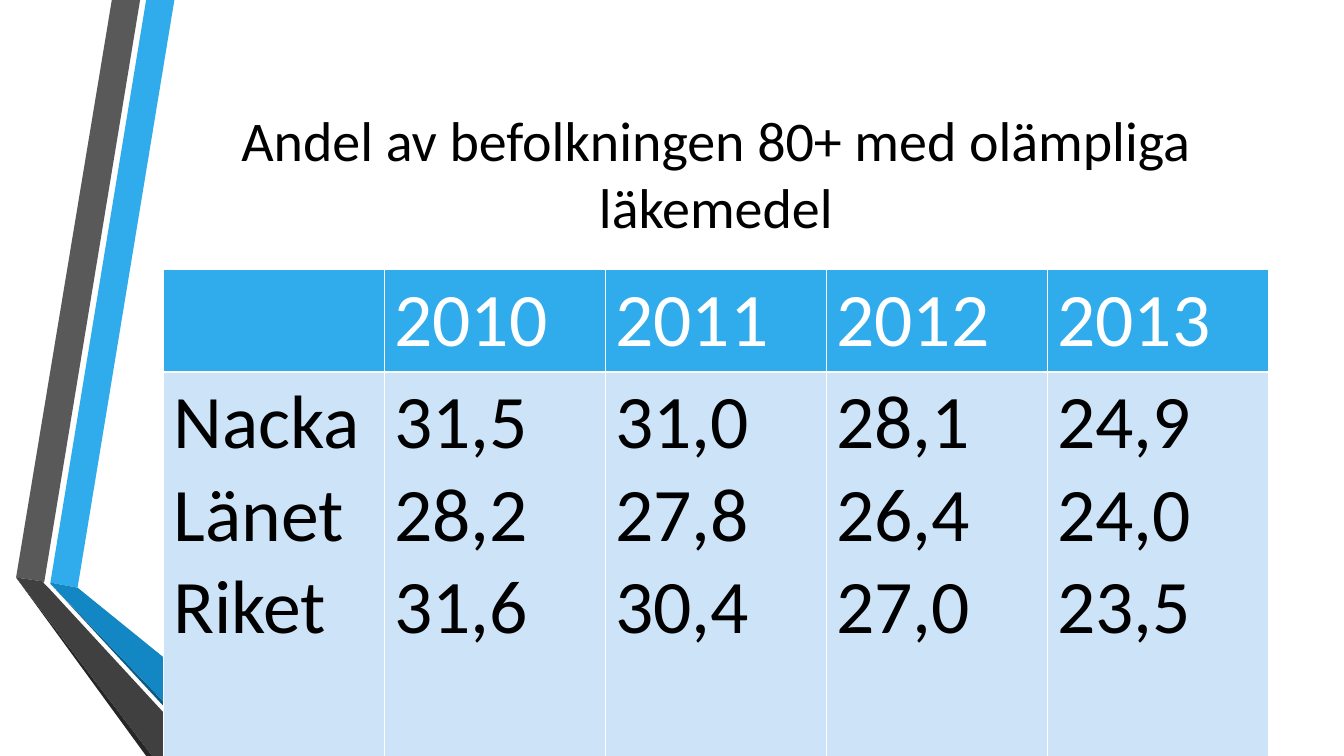
from dataclasses import dataclass

from lxml import etree
from pptx import Presentation
from pptx.dml.color import RGBColor
from pptx.enum.text import MSO_ANCHOR, MSO_AUTO_SIZE, PP_ALIGN
from pptx.oxml.ns import qn
from pptx.util import Pt

CENTER, LEFT = PP_ALIGN.CENTER, PP_ALIGN.LEFT
MIDDLE = MSO_ANCHOR.MIDDLE
NO_AUTOFIT = MSO_AUTO_SIZE.NONE

PX = 9144  # EMU per px, 100 px to the inch
FONT = "Calibri"
BLACK, WHITE = "000000", "FFFFFF"
BLUE, PALE_BLUE = "30ACEC", "CDE3F8"
TITLE_LAYOUT = 5


@dataclass
class Ribbon:
    color: str
    points: list[tuple[int, int]]


@dataclass
class Column:
    year: str
    values: list[str]


RIBBONS = [
    Ribbon(BLUE, [(50, 578), (77, 583), (173, 0), (145, 0)]),
    Ribbon("595959", [(139, 0), (111, 0), (16, 573), (44, 577)]),
    Ribbon("262626", [(16, 573), (145, 750), (151, 750)]),
    Ribbon("0C5A82", [(50, 579), (208, 750), (214, 750)]),
    Ribbon("1287C3", [(50, 578), (50, 579), (214, 750), (283, 750), (77, 583)]),
    Ribbon("404040", [(202, 750), (48, 583), (43, 578), (44, 577), (16, 573), (151, 750)]),
]

COLUMNS = [
    Column("", ["Nacka", "Länet", "Riket"]),
    Column("2010", ["31,5", "28,2", "31,6"]),
    Column("2011", ["31,0", "27,8", "30,4"]),
    Column("2012", ["28,1", "26,4", "27,0"]),
    Column("2013", ["24,9", "24,0", "23,5"]),
]

# Title and table share one left edge and width
LEFT_EDGE, WIDTH = 162, 1096
TITLE_TOP, TITLE_HEIGHT = 75, 192
TABLE_TOP = TITLE_TOP + TITLE_HEIGHT
ROW_HEIGHTS = [102, 458]


def px(n: int) -> int:
    return n * PX


def rgb(color: str) -> RGBColor:
    return RGBColor.from_string(color)


def write(tf, lines: list[str], *, size: int, color: str, align=LEFT) -> None:
    for i, line in enumerate(lines):
        p = tf.paragraphs[0] if i == 0 else tf.add_paragraph()
        p.alignment = align
        r = p.add_run()
        r.text = line
        r.font.name = FONT
        r.font.size = Pt(size)
        r.font.bold = False
        r.font.color.rgb = rgb(color)


def draw_ribbon(shapes, ribbon: Ribbon) -> None:
    start, *rest = ribbon.points
    builder = shapes.build_freeform(*start, scale=PX)
    builder.add_line_segments(rest, close=True)
    sp = builder.convert_to_shape()
    sp.shadow.inherit = False
    sp.fill.solid()
    sp.fill.fore_color.rgb = rgb(ribbon.color)
    sp.line.fill.background()


def set_borders(cell, color: str, width: int) -> None:
    tc_pr = cell._tc.get_or_add_tcPr()
    for side in ("a:lnL", "a:lnR", "a:lnT", "a:lnB"):
        ln = etree.SubElement(tc_pr, qn(side), w=str(Pt(width)))
        fill = etree.SubElement(ln, qn("a:solidFill"))
        etree.SubElement(fill, qn("a:srgbClr"), val=color)


def fill_cell(cell, lines: list[str], fill: str, color: str) -> None:
    set_borders(cell, WHITE, 1)
    cell.fill.solid()
    cell.fill.fore_color.rgb = rgb(fill)
    write(cell.text_frame, lines, size=54, color=color)


def add_title(slide, text: str) -> None:
    sp = slide.shapes.title
    sp.left, sp.top = px(LEFT_EDGE), px(TITLE_TOP)
    sp.width, sp.height = px(WIDTH), px(TITLE_HEIGHT)
    tf = sp.text_frame
    tf.word_wrap = True
    tf.auto_size = NO_AUTOFIT
    tf.vertical_anchor = MIDDLE
    write(tf, [text], size=40, color=BLACK, align=CENTER)


def add_share_table(slide) -> None:
    table = slide.shapes.add_table(
        len(ROW_HEIGHTS), len(COLUMNS),
        px(LEFT_EDGE), px(TABLE_TOP), px(WIDTH), px(sum(ROW_HEIGHTS)),
    ).table
    for row, height in zip(table.rows, ROW_HEIGHTS):
        row.height = px(height)
    for i, column in enumerate(COLUMNS):
        header = [column.year] if column.year else []
        fill_cell(table.cell(0, i), header, BLUE, WHITE)
        fill_cell(table.cell(1, i), column.values, PALE_BLUE, BLACK)


def main() -> None:
    prs = Presentation()
    prs.slide_width, prs.slide_height = px(1333), px(750)
    slide = prs.slides.add_slide(prs.slide_layouts[TITLE_LAYOUT])

    # Folded ribbons along the left edge
    ribbons = slide.shapes.add_group_shape()
    for ribbon in RIBBONS:
        draw_ribbon(ribbons.shapes, ribbon)

    # Title and table
    add_title(slide, "Andel av befolkningen 80+ med olämpliga läkemedel")
    add_share_table(slide)

    prs.save("out.pptx")


if __name__ == "__main__":
    main()
